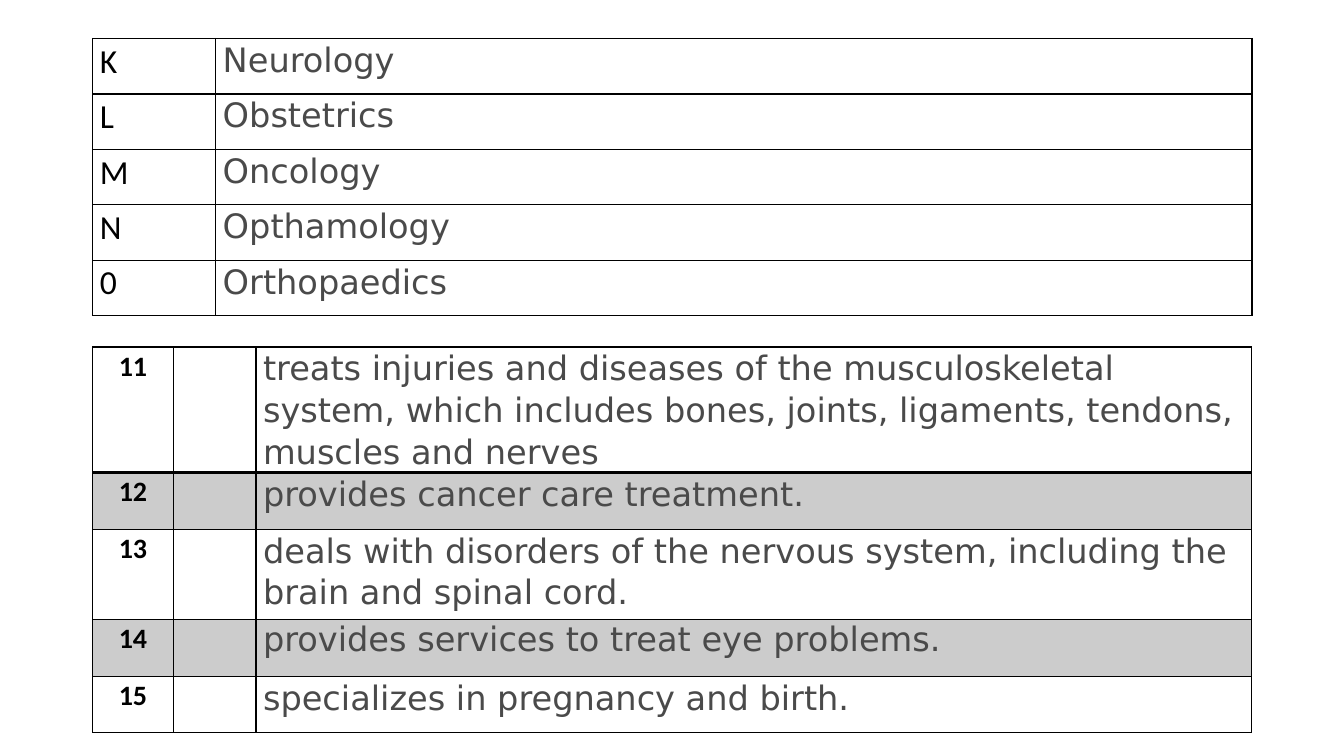
import pptx
import pptx.dml.color
import pptx.enum.text
import pptx.oxml
import pptx.oxml.ns
import pptx.util
from lxml import etree

INK, GREY = "000000", "4A4A4A"
LETTER = dict(font=dict(name="Calibri", size=24, bold=False), color=INK, inset=0.07, align="LEFT")
NUMBER = dict(font=dict(name="Calibri", size=20, bold=True), color=INK, inset=0.06, align="CENTER")
BODY = dict(font=dict(name="DejaVu Sans", size=24, bold=False), color=GREY, inset=0.07, align="LEFT")

DEPARTMENTS = [
    ("K", "Neurology"),
    ("L", "Obstetrics"),
    ("M", "Oncology"),
    ("N", "Opthamology"),
    ("0", "Orthopaedics"),
]
DESCRIPTIONS = [
    ("11", "", "treats injuries and diseases of the musculoskeletal system, which includes "
               "bones, joints, ligaments, tendons, muscles and nerves"),
    ("12", "", "provides cancer care treatment."),
    ("13", "", "deals with disorders of the nervous system, including the brain and spinal cord."),
    ("14", "", "provides services to treat eye problems."),
    ("15", "", "specializes in pregnancy and birth."),
]


def rgb(code):
    return pptx.dml.color.RGBColor.from_string(code)


def set_attributes(target, values):
    for name, value in values.items():
        setattr(target, name, value)


class Deck:
    """Holds the presentation and its current slide; lengths are percentages of the slide."""

    def __init__(self, width, height):
        self.prs = pptx.Presentation()
        self.prs.slide_width = pptx.util.Inches(width)
        self.prs.slide_height = pptx.util.Inches(height)
        self.s = self.prs.slides.add_slide(self.prs.slide_layouts[6])

    def x(self, share):
        return round(self.prs.slide_width * share / 100)

    def y(self, share):
        return round(self.prs.slide_height * share / 100)

    def table(self, left, top, cols, rows, content, styles, shaded=(), thick_below=()):
        """Draw a ruled table; shaded and thick_below list row indexes."""
        frame = self.s.shapes.add_table(len(rows), len(cols), self.x(left), self.y(top),
                                        self.x(sum(cols)), self.y(sum(rows)))
        table = frame.table
        set_attributes(table, dict(first_row=False, horz_banding=False))
        for column, share in zip(table.columns, cols):
            column.width = self.x(share)
        for row, share in zip(table.rows, rows):
            row.height = self.y(share)
        for i, texts in enumerate(content):
            top_line = 2 if i - 1 in thick_below else 1
            bottom_line = 2 if i in thick_below else 1
            for j, (text, style) in enumerate(zip(texts, styles)):
                cell = table.cell(i, j)
                self.text(cell, text, style)
                self.borders(cell, dict(L=1, R=1, T=top_line, B=bottom_line))
                self.fill(cell, 20 if i in shaded else 0)
        return table

    def text(self, cell, text, style):
        inset = pptx.util.Inches(style["inset"])
        set_attributes(cell, dict(margin_left=inset, margin_right=inset,
                                  margin_top=0, margin_bottom=0))
        p = cell.text_frame.paragraphs[0]
        set_attributes(p, dict(
            alignment=getattr(pptx.enum.text.PP_ALIGN, style["align"]), line_spacing=1.07,
            space_before=pptx.util.Pt(6), space_after=pptx.util.Pt(6)))
        if text:
            r = p.add_run()
            r.text = text
            set_attributes(r.font, dict(style["font"], size=pptx.util.Pt(style["font"]["size"])))
            r.font.color.rgb = rgb(style["color"])

    def borders(self, cell, widths):
        """Rule the cell's sides, given as points per side letter."""
        tc_pr = cell._tc.get_or_add_tcPr()
        for side, points in widths.items():
            tc_pr.append(pptx.oxml.parse_xml(
                f'<a:ln{side} {pptx.oxml.ns.nsdecls("a")} w="{pptx.util.Pt(points)}">'
                f'<a:solidFill><a:srgbClr val="{INK}"/></a:solidFill></a:ln{side}>'))

    def fill(self, cell, opacity):
        """Tint the cell with ink at an opacity in percent; zero leaves it clear."""
        if not opacity:
            cell.fill.background()
            return
        cell.fill.solid()
        cell.fill.fore_color.rgb = rgb(INK)
        qn = pptx.oxml.ns.qn
        color = cell._tc.tcPr.find(qn("a:solidFill")).find(qn("a:srgbClr"))
        etree.SubElement(color, qn("a:alpha"), val=str(opacity * 1000))


def main():
    deck = Deck(13.33, 7.5)
    deck.table(6.9, 5.1, [9.15, 77.1], [7.33] * 5, DEPARTMENTS, [LETTER, BODY])
    descriptions = deck.table(6.9, 45.9, [6, 6.15, 74.1], [16.53, 7.47, 12, 7.47, 7.47],
                              DESCRIPTIONS, [NUMBER, NUMBER, BODY],
                              shaded=(1, 3), thick_below=(0,))
    descriptions.cell(3, 2).text_frame.paragraphs[0].line_spacing = None
    deck.prs.save("out.pptx")


if __name__ == "__main__":
    main()
